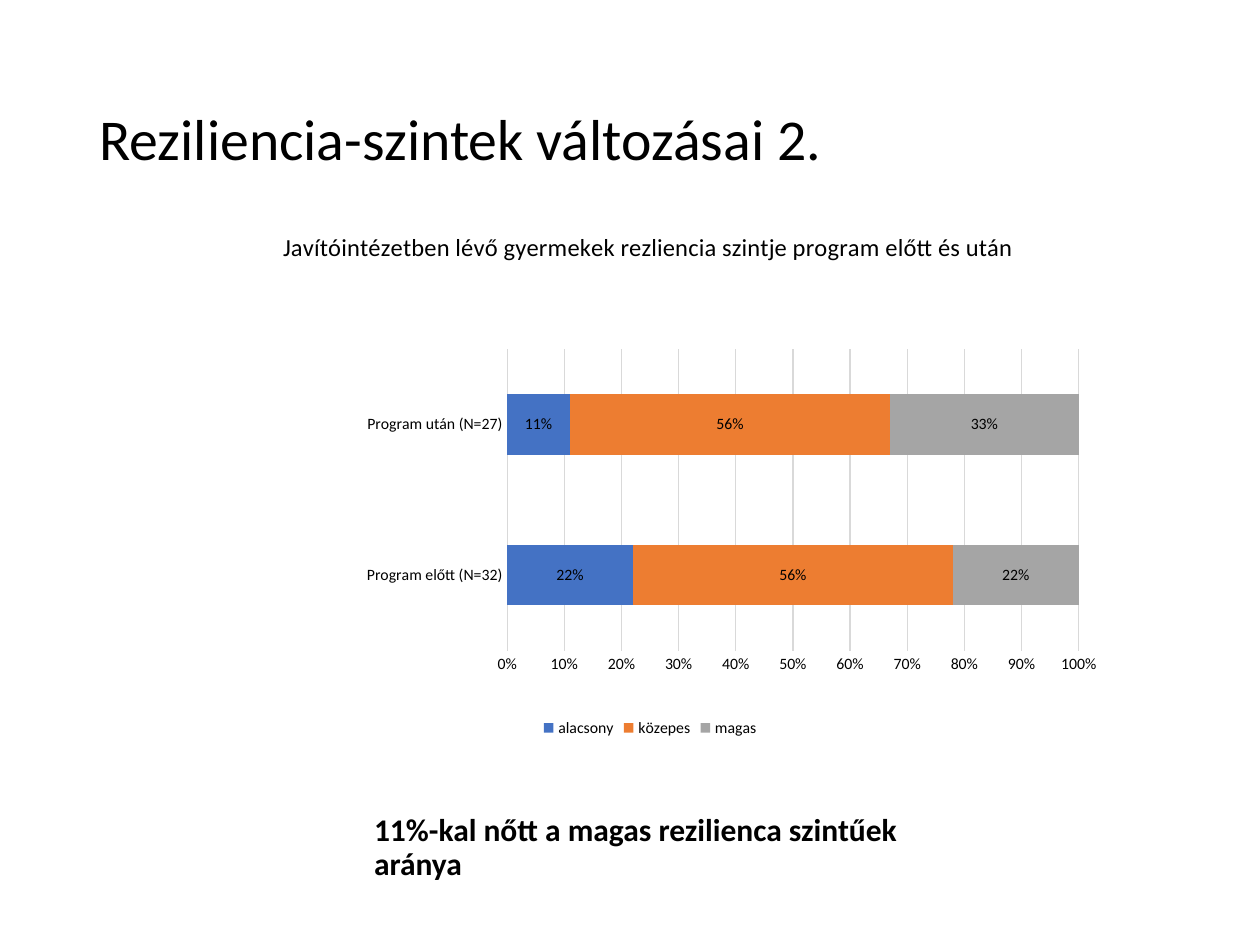
from dataclasses import dataclass

from lxml import etree
from pptx import Presentation
from pptx import util as u
from pptx.chart.data import CategoryChartData
from pptx.dml.color import RGBColor
from pptx.enum import chart as charts, text
from pptx.oxml import ns


@dataclass(frozen=True)
class Theme:
    font: str = "Calibri"
    ink: str = "000000"
    grid: str = "D9D9D9"
    levels: tuple = ("4472C4", "ED7D31", "A5A5A5")
    title: float = 33
    note: float = 18
    chart_title: float = 14
    chart: float = 10
    label: float = 9


THEME = Theme()


def style_font(font, size, bold=False):
    font.name = THEME.font
    font.size = u.Pt(size)
    font.bold = bold
    font.color.rgb = RGBColor.from_string(THEME.ink)


def style_line(line):
    line.color.rgb = RGBColor.from_string(THEME.grid)
    line.width = u.Pt(0.75)


def add_text(page, words, place, size, anchor, bold=False, space_before=0):
    box = page.shapes.add_textbox(*map(u.Inches, place))
    frame = box.text_frame
    frame.word_wrap = True
    frame.vertical_anchor = anchor
    para = frame.paragraphs[0]
    para.line_spacing = 0.9
    para.space_before = u.Pt(space_before)
    span = para.add_run()
    span.text = words
    style_font(span.font, size, bold)


def set_layout(parent, after, **values):
    for old in parent.findall(ns.qn("c:layout")):
        parent.remove(old)
    layout = etree.Element(ns.qn("c:layout"))
    manual = etree.SubElement(layout, ns.qn("c:manualLayout"))
    for name, value in values.items():
        etree.SubElement(manual, ns.qn(f"c:{name}")).set("val", str(value))
    if after is None:
        parent.insert(0, layout)
    else:
        after.addnext(layout)


def style_axes(chart):
    for axis in (chart.category_axis, chart.value_axis):
        axis.major_tick_mark = charts.XL_TICK_MARK.NONE
        axis.minor_tick_mark = charts.XL_TICK_MARK.NONE
        style_font(axis.tick_labels.font, THEME.label)
    style_line(chart.category_axis.format.line)
    values = chart.value_axis
    values.minimum_scale, values.maximum_scale, values.major_unit = 0, 1, 0.1
    values.format.line.fill.background()
    values.has_major_gridlines = True
    style_line(values.major_gridlines.format.line)
    values.tick_labels.number_format = "0%"
    values.tick_labels.number_format_is_linked = False


def style_series(plot):
    plot.gap_width = 150
    plot.overlap = 100
    plot.vary_by_categories = False
    for series, color in zip(plot.series, THEME.levels):
        series.format.fill.solid()
        series.format.fill.fore_color.rgb = RGBColor.from_string(color)
        labels = series.data_labels
        labels.show_value = True
        labels.number_format = "0%"
        labels.number_format_is_linked = False
        style_font(labels.font, THEME.label)


def title_chart(chart, words):
    chart.has_title = True
    title = chart.chart_title
    span = title.text_frame.paragraphs[0].add_run()
    span.text = words
    style_font(span.font, THEME.chart_title)
    title.include_in_layout = False
    heading = chart.element.find(f".//{ns.qn('c:title')}")
    set_layout(heading, heading.find(ns.qn("c:tx")),
               xMode="edge", yMode="edge", x=0.11, y=0.04)


def add_level_chart(page, title, categories, levels, place):
    data = CategoryChartData(number_format="0%")
    data.categories = categories
    for name, shares in levels.items():
        data.add_series(name, shares)
    kind = charts.XL_CHART_TYPE.BAR_STACKED_100
    chart = page.shapes.add_chart(kind, *map(u.Inches, place), data).chart
    style_font(chart.font, THEME.chart)
    title_chart(chart, title)
    style_axes(chart)
    style_series(chart.plots[0])
    chart.has_legend = True
    chart.legend.position = charts.XL_LEGEND_POSITION.BOTTOM
    chart.legend.include_in_layout = False
    style_font(chart.legend.font, THEME.label)
    area = chart.element.find(f".//{ns.qn('c:plotArea')}")
    set_layout(area, None, layoutTarget="inner", xMode="edge", yMode="edge",
               x=0.35, y=0.27, w=0.6, h=0.56)


def main():
    deck = Presentation()
    deck.slide_width, deck.slide_height = u.Inches(10), u.Inches(7.5)
    page = deck.slides.add_slide(deck.slide_layouts[6])
    add_text(page, "Reziliencia-szintek változásai 2.", (0.69, 0.4, 8.62, 1.45),
             THEME.title, text.MSO_ANCHOR.MIDDLE)
    add_text(page, "11%-kal nőtt a magas rezilienca szintűek aránya",
             (2.87, 6.11, 4.65, 0.94), THEME.note, text.MSO_ANCHOR.BOTTOM,
             bold=True, space_before=7.5)
    add_level_chart(
        page,
        "Javítóintézetben lévő gyermekek rezliencia szintje program előtt és után",
        ("Program előtt (N=32)", "Program után (N=27)"),
        {"alacsony": (0.22, 0.11), "közepes": (0.56, 0.56), "magas": (0.22, 0.33)},
        (1.38, 1.62, 7.56, 4.27))
    deck.save("out.pptx")


if __name__ == "__main__":
    main()
